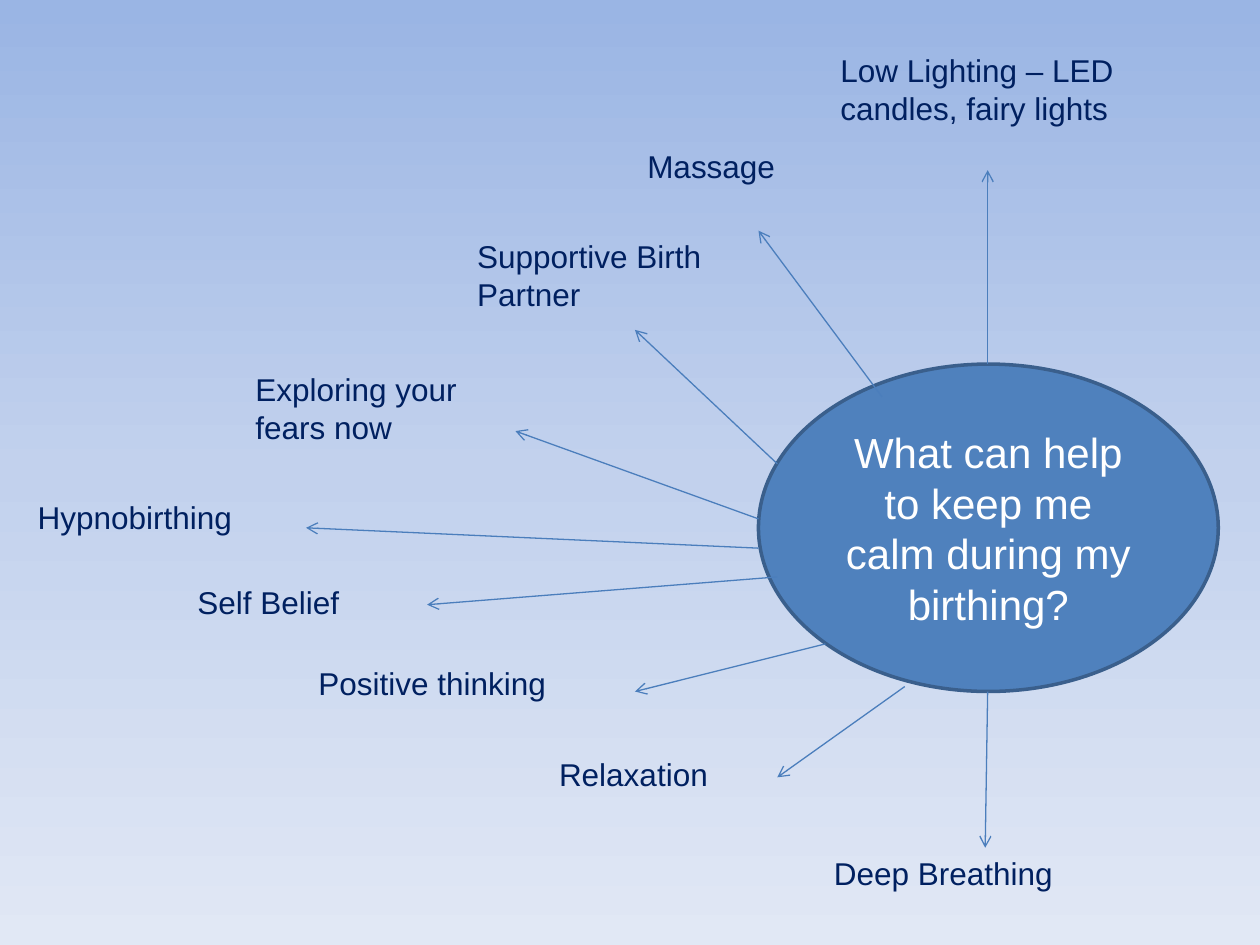
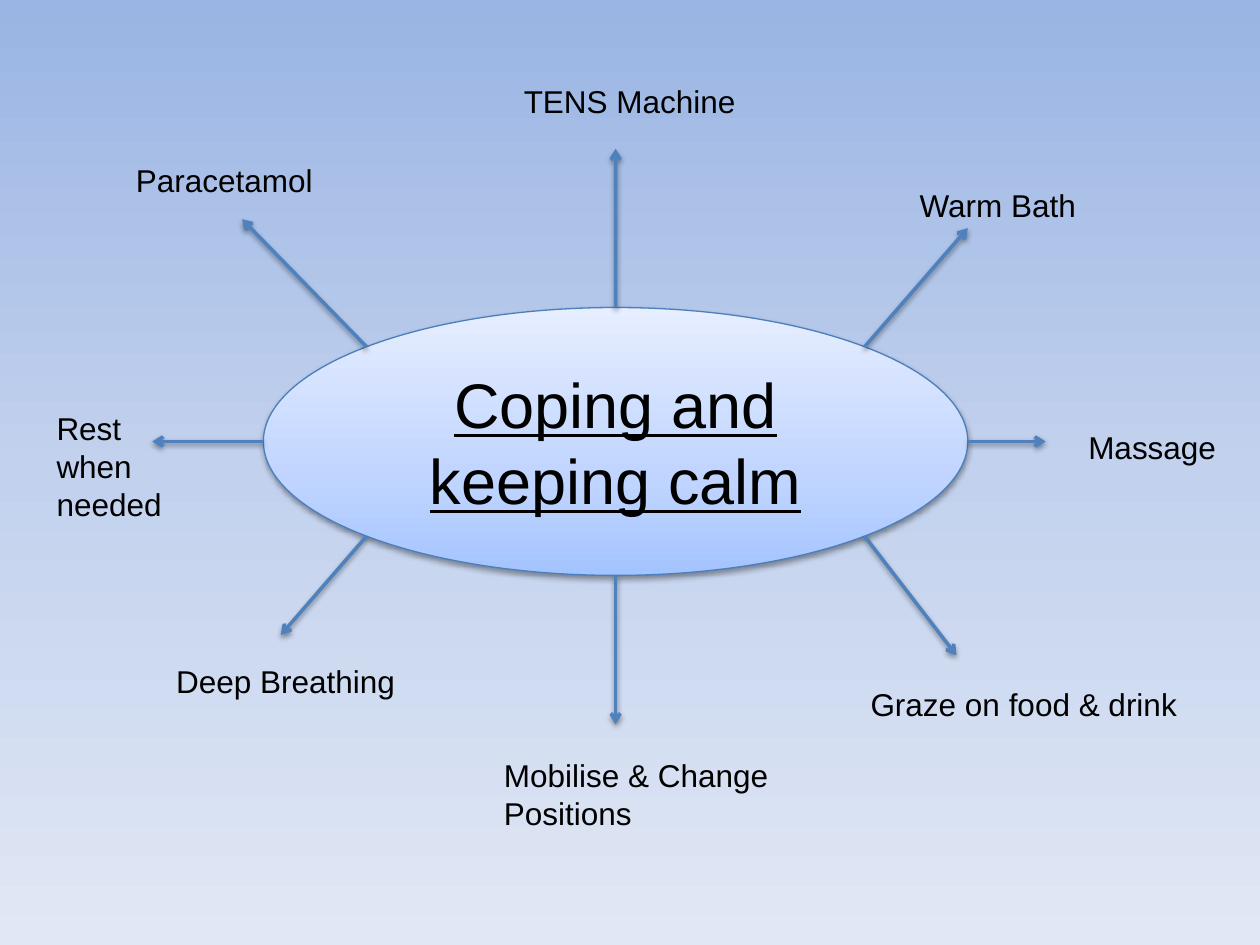
import math

import lxml.etree
import pptx
import pptx.dml.color
import pptx.enum.dml
import pptx.enum.shapes
import pptx.enum.text
import pptx.oxml.ns
import pptx.util

Cm = pptx.util.Cm
Pt = pptx.util.Pt
RGBColor = pptx.dml.color.RGBColor
qn = pptx.oxml.ns.qn

FONT = "Arial"
COLORS = {
    "sky_top": "9AB5E4",
    "sky_middle": "C2D1ED",
    "sky_bottom": "E1E8F5",
    "blue": "4F81BD",
    "dark_blue": "3A5F8C",
    "thin_blue": "4B7EBC",
    "navy": "002060",
    "white": "FFFFFF",
    "black": "000000",
    "oval_bottom": "A4C4FF",
    "oval_middle": "BFD4FF",
    "oval_top": "E6EEFF",
}


def paint_gradient(fill, element, stops, angle):
    fill.gradient()
    gradient = element.find(".//" + qn("a:gradFill"))
    for child in list(gradient):
        gradient.remove(child)
    stop_list = lxml.etree.SubElement(gradient, qn("a:gsLst"))
    for position, color in stops:
        stop = lxml.etree.SubElement(stop_list, qn("a:gs"), pos=str(position * 1000))
        lxml.etree.SubElement(stop, qn("a:srgbClr"), val=COLORS[color])
    lxml.etree.SubElement(gradient, qn("a:lin"), ang=str(angle * 60000), scaled="0")


def write_text(shape, text, size, color, alignment, underline=False):
    shape.text_frame.word_wrap = True
    paragraph = shape.text_frame.paragraphs[0]
    paragraph.alignment = alignment
    run = paragraph.add_run()
    run.text = text
    run.font.name = FONT
    run.font.size = Pt(size)
    run.font.underline = underline
    run.font.color.rgb = RGBColor.from_string(COLORS[color])


presentation = pptx.Presentation()
presentation.slide_width = Cm(25.4)
presentation.slide_height = Cm(19.05)
master = presentation.slide_master
paint_gradient(
    master.background.fill,
    master.element,
    [(0, "sky_top"), (50, "sky_middle"), (100, "sky_bottom")],
    90,
)

birthing_spokes = [
    ("Low Lighting – LED candles, fairy lights", (16.69, 0.91, 7.19, 2.01), (19.91, 7.34), (19.91, 3.43)),
    ("Massage", (12.8, 2.84, 4.29, 1.14), (17.78, 8), (15.29, 4.65)),
    ("Supportive Birth Partner", (9.37, 4.65, 5.56, 2.01), (15.67, 9.35), (12.8, 6.65)),
    ("Exploring your fears now", (4.9, 7.34, 5.51, 2.01), (15.29, 10.46), (10.39, 8.69)),
    ("Hypnobirthing", (0.51, 9.91, 5.69, 1.14), (15.29, 11.05), (6.17, 10.64)),
    ("Self Belief", (3.73, 11.63, 4.88, 1.14), (15.67, 11.63), (8.61, 12.19)),
    ("Positive thinking", (6.17, 13.26, 6.15, 1.14), (16.64, 12.98), (12.8, 13.94)),
    ("Relaxation", (11.02, 15.09, 5.69, 1.14), (18.24, 13.84), (15.67, 15.67)),
    ("Deep Breathing", (16.56, 17.09, 6.58, 1.14), (19.91, 13.94), (19.86, 17.09)),
]

coping_oval = (5.31, 6.2, 14.2, 5.4)
coping_labels = [
    ("Massage", (21.69, 8.51, 3.2, 1.02), (21.08, 8.9)),
    ("Graze on food & drink", (17.3, 13.69, 7.01, 1.02), (19.28, 13.21)),
    ("Mobilise & Change Positions", (9.91, 15.11, 6.81, 1.8), (12.41, 14.6)),
    ("Deep Breathing", (3.3, 13.23, 5, 1.02), (5.66, 12.8)),
    ("Rest when needed", (0.89, 8.13, 2.79, 2.57), (3.07, 8.9)),
    ("Paracetamol", (2.49, 3.12, 4.6, 1.02), (4.88, 4.42)),
    ("TENS Machine", (10.31, 1.52, 5, 1.02), (12.41, 3)),
    ("Warm Bath", (18.29, 3.63, 5.41, 1.02), (19.51, 4.6)),
]
left, top, width, height = coping_oval
coping_spokes = []
for index, (label, box, tip) in enumerate(coping_labels):
    angle = math.radians(45 * index)
    start = (
        left + width / 2 * (1 + math.cos(angle)),
        top + height / 2 * (1 + math.sin(angle)),
    )
    coping_spokes.append((label, box, start, tip))

mind_maps = [
    {
        "title": "What can help to keep me calm during my birthing?",
        "oval": (15.29, 7.34, 9.27, 6.6),
        "title_style": (24, "white"),
        "underline": False,
        "fill": "blue",
        "outline": ("dark_blue", 2),
        "arrow": ("thin_blue", 0.75),
        "label_color": "navy",
        "shadow": False,
        "spokes": birthing_spokes,
    },
    {
        "title": "Coping and keeping calm",
        "oval": coping_oval,
        "title_style": (36, "black"),
        "underline": True,
        "fill": [(0, "oval_bottom"), (35, "oval_middle"), (100, "oval_top")],
        "outline": ("thin_blue", 0.75),
        "arrow": ("blue", 2),
        "label_color": "black",
        "shadow": True,
        "spokes": coping_spokes,
    },
]

for mind_map in mind_maps:
    slide = presentation.slides.add_slide(presentation.slide_layouts[6])
    oval = slide.shapes.add_shape(
        pptx.enum.shapes.MSO_SHAPE.OVAL, *[Cm(length) for length in mind_map["oval"]]
    )
    if isinstance(mind_map["fill"], str):
        oval.fill.solid()
        oval.fill.fore_color.rgb = RGBColor.from_string(COLORS[mind_map["fill"]])
    else:
        paint_gradient(oval.fill, oval.element, mind_map["fill"], 270)
    oval.text_frame.vertical_anchor = pptx.enum.text.MSO_ANCHOR.MIDDLE
    write_text(
        oval,
        mind_map["title"],
        *mind_map["title_style"],
        pptx.enum.text.PP_ALIGN.CENTER,
        mind_map["underline"],
    )
    outlined = [(oval, mind_map["outline"])]

    for label, box, start, tip in mind_map["spokes"]:
        arrow = slide.shapes.add_connector(
            pptx.enum.shapes.MSO_CONNECTOR.STRAIGHT,
            *[Cm(length) for length in start + tip],
        )
        outlined.append((arrow, mind_map["arrow"]))
        text_box = slide.shapes.add_textbox(*[Cm(length) for length in box])
        text_box.text_frame.auto_size = pptx.enum.text.MSO_AUTO_SIZE.SHAPE_TO_FIT_TEXT
        write_text(
            text_box, label, 18, mind_map["label_color"], pptx.enum.text.PP_ALIGN.LEFT
        )

    for shape, (color, line_width) in outlined:
        shape.line.color.rgb = RGBColor.from_string(COLORS[color])
        shape.line.width = Pt(line_width)
        properties = shape.element.spPr
        if shape is not oval:
            line = properties.find(qn("a:ln"))
            lxml.etree.SubElement(line, qn("a:tailEnd"), type="arrow")
        effects = lxml.etree.SubElement(properties, qn("a:effectLst"))
        if mind_map["shadow"]:
            shadow = lxml.etree.SubElement(
                effects,
                qn("a:outerShdw"),
                blurRad=str(Pt(3.1)),
                dist=str(Pt(1.6)),
                dir="5400000",
                rotWithShape="0",
            )
            shadow_color = lxml.etree.SubElement(
                shadow, qn("a:srgbClr"), val=COLORS["black"]
            )
            lxml.etree.SubElement(shadow_color, qn("a:alpha"), val="38000")

presentation.save("out.pptx")
